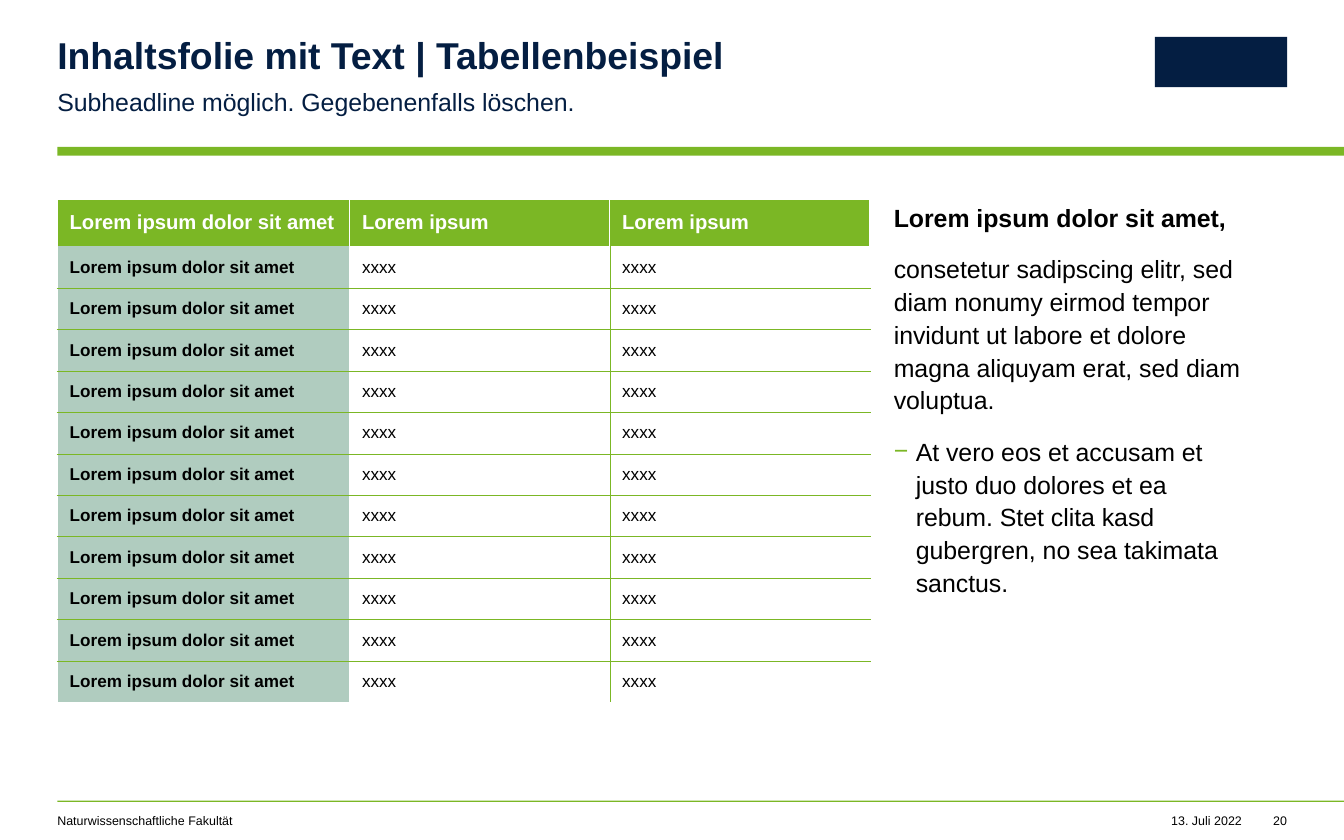
from lxml.etree import SubElement
from pptx import Presentation
from pptx.dml.color import RGBColor
from pptx.enum.shapes import MSO_SHAPE
from pptx.enum.text import MSO_ANCHOR, MSO_AUTO_SIZE, PP_ALIGN
from pptx.oxml.ns import qn
from pptx.util import Cm, Pt

GREEN, SAGE, NAVY, BLACK, WHITE = "7BB725", "B0CCBF", "041E42", "000000", "FFFFFF"


def style(p, size, color, bold=False):
    for r in p.runs:
        r.font.name = "Arial"
        r.font.size = Pt(size)
        r.font.bold = bold
        r.font.color.rgb = RGBColor.from_string(color)


def set_frame(sp, left, top, width, height, right_inset=0):
    sp.left, sp.top, sp.width, sp.height = Cm(left), Cm(top), Cm(width), Cm(height)
    tf = sp.text_frame
    tf.word_wrap = True
    tf.auto_size = MSO_AUTO_SIZE.NONE
    tf.vertical_anchor = MSO_ANCHOR.TOP
    tf.margin_left = tf.margin_top = tf.margin_bottom = 0
    tf.margin_right = Cm(right_inset)
    return tf


prs = Presentation()
prs.slide_width, prs.slide_height = Cm(30.48), Cm(19.05)
s = prs.slides.add_slide(prs.slide_layouts[3])
title, subhead, body = s.placeholders

bars = [
    (1.3, 3.33, 29.18, 0.2, GREEN),
    (1.3, 18.16, 29.18, 0.03, GREEN),
    (26.19, 0.84, 3, 1.14, NAVY),
]
for left, top, width, height, color in bars:
    sp = s.shapes.add_shape(MSO_SHAPE.RECTANGLE, Cm(left), Cm(top), Cm(width), Cm(height))
    sp.shadow.inherit = False
    sp.fill.solid()
    sp.fill.fore_color.rgb = RGBColor.from_string(color)
    sp.line.fill.background()

footers = [
    ("Naturwissenschaftliche Fakultät", 1.3, 13.67, PP_ALIGN.LEFT),
    ("13. Juli 2022", 26.17, 2, PP_ALIGN.RIGHT),
    ("20", 28.63, 0.56, PP_ALIGN.RIGHT),
]
for text, left, width, align in footers:
    sp = s.shapes.add_textbox(0, 0, 0, 0)
    p = set_frame(sp, left, 18.44, width, 0.33).paragraphs[0]
    p.text = text
    p.alignment = align
    style(p, 8, BLACK)

p = set_frame(title, 1.3, 0.84, 17.12, 0.91).paragraphs[0]
p.text = "Inhaltsfolie mit Text | Tabellenbeispiel"
p.alignment = PP_ALIGN.LEFT
p.line_spacing = 0.9
style(p, 24, NAVY, True)

tf = set_frame(subhead, 1.3, 1.9, 17.12, 0.69, 1)
tf.text = "Subheadline möglich. Gegebenenfalls löschen."
style(tf.paragraphs[0], 16, NAVY)

tf = set_frame(body, 20.27, 4.52, 8.92, 12.7, 1)
tf.text = "\n".join([
    "Lorem ipsum dolor sit amet,",
    "consetetur sadipscing elitr, sed diam nonumy eirmod tempor invidunt ut labore "
    "et dolore magna aliquyam erat, sed diam voluptua.",
    "At vero eos et accusam et justo duo dolores et ea rebum. Stet clita kasd "
    "gubergren, no sea takimata sanctus.",
])
heading, intro, item = tf.paragraphs
style(heading, 16, BLACK, True)
style(intro, 16, BLACK)
style(item, 16, BLACK)
item.level = 1

for p in [*subhead.text_frame.paragraphs, *tf.paragraphs]:
    p.line_spacing = 1.1
    p.space_before = Pt(0)
    p.space_after = Pt(12)
    indent = Cm(0.5) if p.level else 0
    pPr = p._p.get_or_add_pPr()
    pPr.set("marL", str(indent))
    pPr.set("indent", str(-indent))
    if p.level:
        SubElement(SubElement(pPr, qn("a:buClr")), qn("a:srgbClr"), val=GREEN)
        SubElement(pPr, qn("a:buFont"), typeface="Arial")
        SubElement(pPr, qn("a:buChar"), char="−")
    else:
        SubElement(pPr, qn("a:buNone"))

rows = [["Lorem ipsum dolor sit amet", "Lorem ipsum", "Lorem ipsum"]]
rows += [["Lorem ipsum dolor sit amet", "xxxx", "xxxx"]] * 11
last_row, last_col = len(rows) - 1, 2
frame = s.shapes.add_table(len(rows), 3, Cm(1.3), Cm(4.52), Cm(18.43), Cm(11.41))
table = frame.table
table.first_row = table.horz_banding = False
for col, width in zip(table.columns, (6.63, 5.9, 5.9)):
    col.width = Cm(width)

for i, row in enumerate(rows):
    table.rows[i].height = Cm(0.94 if i else 1.07)
    for j, text in enumerate(row):
        cell = table.cell(i, j)
        cell.text = text
        cell.vertical_anchor = MSO_ANCHOR.MIDDLE
        cell.margin_left = cell.margin_right = Cm(0.28)
        cell.margin_top = cell.margin_bottom = Cm(0.1)
        style(cell.text_frame.paragraphs[0], 11 if i else 13, BLACK if i else WHITE, i == 0 or j == 0)

        outer, rule = (WHITE, 1), (GREEN, 0.25)
        inner = [outer, rule] if i else [(WHITE, 0.5)] * 2
        borders = {
            "a:lnL": inner[j - 1] if j else outer,
            "a:lnR": inner[j] if j < last_col else outer,
            "a:lnT": rule if i > 1 else None if i else outer,
            "a:lnB": rule if 0 < i < last_row else None,
        }
        tcPr = cell._tc.get_or_add_tcPr()
        for tag, border in borders.items():
            ln = SubElement(tcPr, qn(tag))
            if border:
                color, width = border
                ln.set("w", str(Pt(width)))
                SubElement(SubElement(ln, qn("a:solidFill")), qn("a:srgbClr"), val=color)
            else:
                SubElement(ln, qn("a:noFill"))

        if i and j:
            cell.fill.background()
        else:
            cell.fill.solid()
            cell.fill.fore_color.rgb = RGBColor.from_string(SAGE if i else GREEN)

prs.save("out.pptx")
